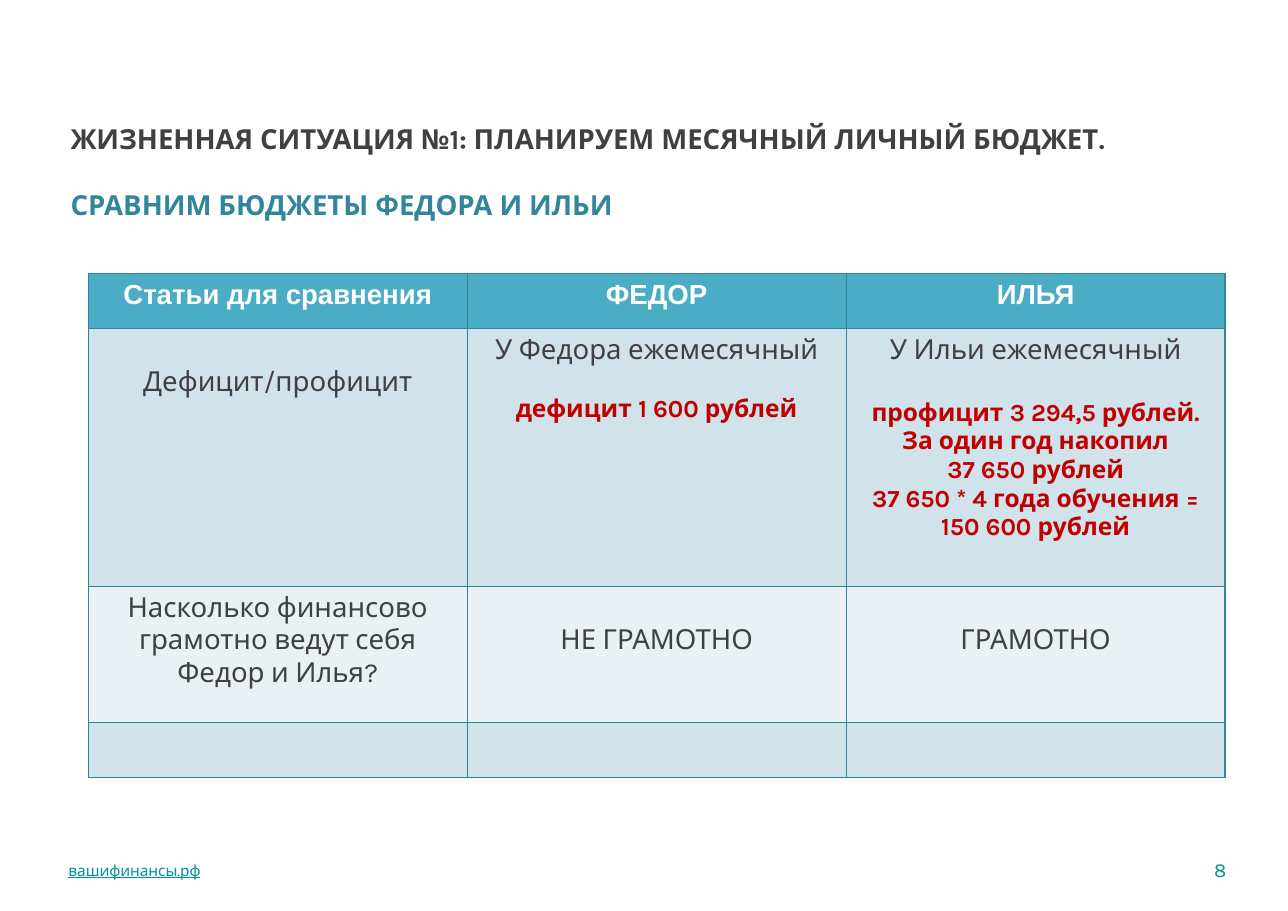
from dataclasses import dataclass

from lxml import etree
from pptx import Presentation
from pptx.dml.color import RGBColor
from pptx.enum.text import MSO_ANCHOR, MSO_AUTO_SIZE, PP_ALIGN
from pptx.oxml.ns import qn
from pptx.util import Inches, Pt

LEFT, CENTER, RIGHT = PP_ALIGN.LEFT, PP_ALIGN.CENTER, PP_ALIGN.RIGHT
TOP, MIDDLE = MSO_ANCHOR.TOP, MSO_ANCHOR.MIDDLE
NO_AUTOFIT = MSO_AUTO_SIZE.NONE
TITLE_ONLY = 5


@dataclass(frozen=True)
class Theme:
    body_font: str = "Karla"
    header_font: str = "Arial"
    text: str = "404040"
    accent: str = "31859C"
    footer: str = "00909B"
    highlight: str = "C00000"
    white: str = "FFFFFF"
    header_fill: str = "4BACC6"
    dark_band: str = "D0E3EA"
    light_band: str = "E9F1F5"
    main_size: float = 18
    highlight_size: float = 16
    number_size: float = 13
    link_size: float = 10
    main_gap: float = 21
    highlight_gap: float = 18.7


THEME = Theme()


@dataclass(frozen=True)
class Line:
    text: str
    size: float = THEME.main_size
    color: str = THEME.text
    bold: bool = False
    font: str = THEME.body_font
    underline: bool = False
    before: float = 0


def header(text):
    return [Line(text, color=THEME.white, bold=True, font=THEME.header_font)]


def highlight(text, before=0):
    return Line(text, THEME.highlight_size, THEME.highlight, True, before=before)


def write_lines(frame, lines, align):
    for index, line in enumerate(lines):
        paragraph = frame.add_paragraph() if index else frame.paragraphs[0]
        paragraph.text = line.text
        paragraph.alignment = align
        paragraph.space_before = Pt(line.before)
        font = paragraph.font
        font.name, font.size, font.bold = line.font, Pt(line.size), line.bold
        font.color.rgb = RGBColor.from_string(line.color)
        if line.underline:
            font.underline = True


def set_frame(frame, anchor, wrap=True):
    frame.auto_size = NO_AUTOFIT
    frame.word_wrap = wrap
    frame.vertical_anchor = anchor
    frame.margin_left = frame.margin_right = Inches(0.05)
    frame.margin_top = frame.margin_bottom = Inches(0.05)


def place_title(slide, left, top, width, height):
    title = slide.shapes.title
    title.left, title.top = Inches(left), Inches(top)
    title.width, title.height = Inches(width), Inches(height)
    set_frame(title.text_frame, TOP)
    write_lines(title.text_frame, [
        Line("ЖИЗНЕННАЯ СИТУАЦИЯ №1: ПЛАНИРУЕМ МЕСЯЧНЫЙ ЛИЧНЫЙ БЮДЖЕТ.", bold=True),
        Line("СРАВНИМ БЮДЖЕТЫ ФЕДОРА И ИЛЬИ", color=THEME.accent, bold=True,
             before=THEME.main_gap),
    ], LEFT)


def add_label(slide, line, align, box, wrap=True):
    label = slide.shapes.add_textbox(*(Inches(length) for length in box))
    set_frame(label.text_frame, MIDDLE, wrap)
    write_lines(label.text_frame, [line], align)


def add_footer(slide, left, top, width, height):
    link_width, number_width = 3.97, 0.22
    add_label(slide, Line("вашифинансы.рф", THEME.link_size, THEME.footer, underline=True),
              LEFT, (left, top + 0.03, link_width, height - 0.05))
    add_label(slide, Line("8", THEME.number_size, THEME.footer), RIGHT,
              (left + width - number_width, top, number_width, height), wrap=False)


def style_cell(cell, fill):
    cell.fill.solid()
    cell.fill.fore_color.rgb = RGBColor.from_string(fill)
    properties = cell._tc.get_or_add_tcPr()
    # Borders stand before the fill
    for index, side in enumerate(("lnL", "lnR", "lnT", "lnB")):
        border = etree.Element(qn(f"a:{side}"), w=str(Pt(1)))
        solid = etree.SubElement(border, qn("a:solidFill"))
        etree.SubElement(solid, qn("a:srgbClr"), val=THEME.accent)
        properties.insert(index, border)


def add_comparison(slide, left, top, width, height):
    one_line_down = 0.05 + THEME.main_gap / 72
    # Each row: height, fill, cells; each cell: top margin, lines
    rows = [
        (0.5, THEME.header_fill, [
            (0.05, header("Статьи для сравнения")),
            (0.05, header("ФЕДОР")),
            (0.05, header("ИЛЬЯ")),
        ]),
        (2.34, THEME.dark_band, [
            (one_line_down, [Line("Дефицит/профицит")]),
            (0.05, [Line("У Федора ежемесячный"),
                    highlight("дефицит 1 600 рублей", THEME.highlight_gap)]),
            (0.05, [Line("У Ильи ежемесячный"),
                    highlight("профицит 3 294,5 рублей.", THEME.main_gap),
                    highlight("За один год накопил"),
                    highlight("37 650 рублей"),
                    highlight("37 650 * 4 года обучения = 150 600 рублей")]),
        ]),
        (1.23, THEME.light_band, [
            (0.05, [Line("Насколько финансово грамотно ведут себя Федор и Илья?")]),
            (one_line_down, [Line("НЕ ГРАМОТНО")]),
            (one_line_down, [Line("ГРАМОТНО")]),
        ]),
        (0.5, THEME.dark_band, [(0.05, [])] * 3),
    ]
    column_count = len(rows[0][2])
    table = slide.shapes.add_table(len(rows), column_count, Inches(left), Inches(top),
                                   Inches(width), Inches(height)).table
    table.first_row = table.horz_banding = False
    for column in table.columns:
        column.width = Inches(width / column_count)
    for row_index, (row_height, fill, contents) in enumerate(rows):
        table.rows[row_index].height = Inches(row_height)
        for column_index, (margin_top, lines) in enumerate(contents):
            cell = table.cell(row_index, column_index)
            style_cell(cell, fill)
            cell.margin_top = Inches(margin_top)
            write_lines(cell.text_frame, lines, CENTER)


def main():
    presentation = Presentation()
    presentation.slide_width, presentation.slide_height = Inches(11.68), Inches(8.26)
    slide = presentation.slides.add_slide(presentation.slide_layouts[TITLE_ONLY])
    place_title(slide, 0.59, 1.06, 10.52, 0.87)
    add_comparison(slide, 0.8, 2.48, 10.31, 4.57)
    add_footer(slide, 0.57, 7.72, 10.6, 0.33)
    presentation.save("out.pptx")


if __name__ == "__main__":
    main()
